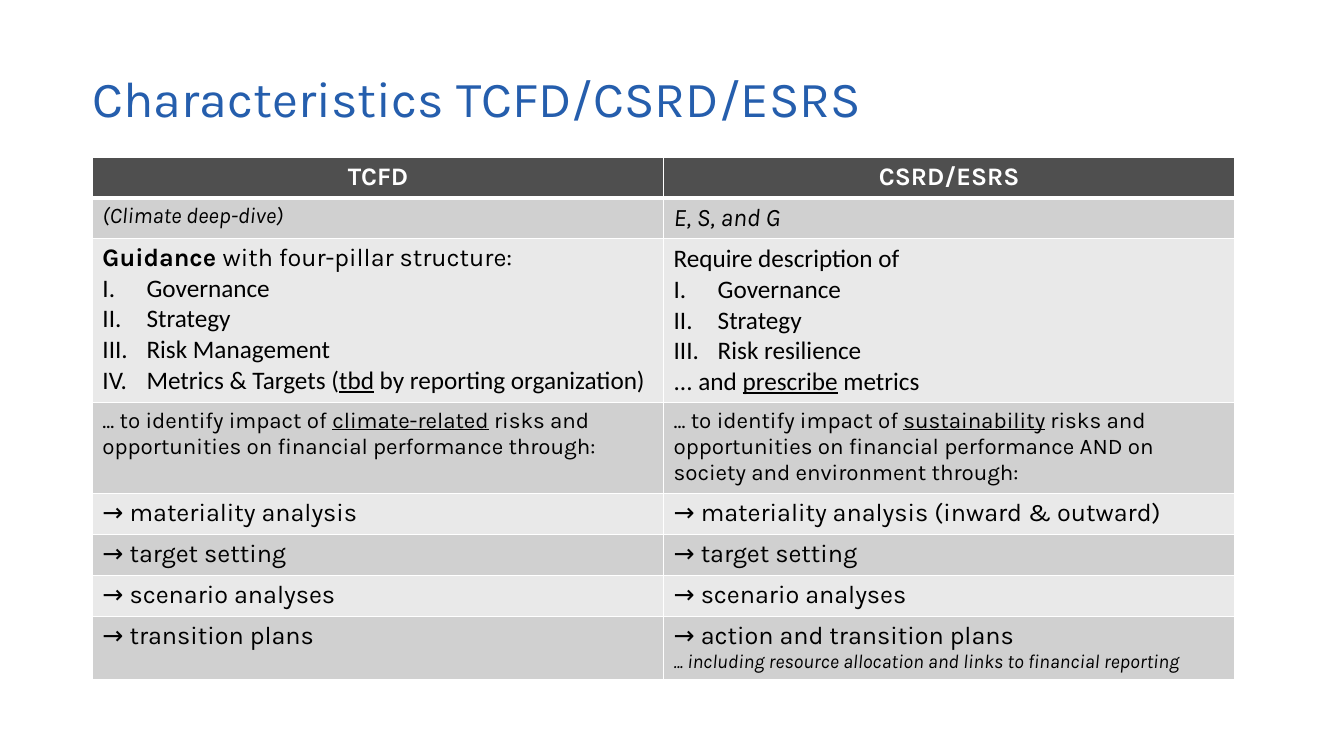
from pptx import Presentation
from pptx import util as u
from pptx.dml import color
from pptx.enum import text
from pptx.oxml import parse_xml
from pptx.oxml.ns import nsdecls

Pt = u.Pt
KARLA, CALIBRI = "Karla", "Calibri"
BLUE, BLACK, WHITE = "255EAD", "000000", "FFFFFF"
HEADER_GREY, DARK_BAND, LIGHT_BAND = "4F4F4F", "D0D0D0", "E9E9E9"
ROW_HEIGHTS = [29.2, 26, 117.4, 48, 29.2, 29.2, 29.2, 29.2]


def rgb(value):
    return color.RGBColor.from_string(value)


def line(*runs, size=18, font=KARLA, numbered=False):
    return runs, size, font, numbered


def pillars(*names):
    return [line((name, ""), font=CALIBRI, numbered=True) for name in names]


def steps(tcfd, csrd):
    return [[line(("→ " + step, ""))] for step in (tcfd, csrd)]


COMPARISON = [
    [[line(("TCFD", "b"))], [line(("CSRD/ESRS", "b"))]],
    [[line(("(Climate deep-dive)", "i"), size=16)],
     [line(("E, S, and G", "i"))]],
    [[line(("Guidance ", "b"), ("with four-pillar structure:", "")),
      *pillars("Governance", "Strategy", "Risk Management"),
      line(("Metrics & Targets (", ""), ("tbd", "u"),
           (" by reporting organization)", ""), font=CALIBRI, numbered=True)],
     [line(("Require description of", ""), font=CALIBRI),
      *pillars("Governance", "Strategy", "Risk resilience"),
      line(("... and ", ""), ("prescribe", "u"), (" metrics", ""), font=CALIBRI)]],
    [[line(("... to identify impact of ", ""), ("climate-related", "u"),
           (" risks and opportunities on financial performance through:", ""), size=16)],
     [line(("... to identify impact of ", ""), ("sustainability", "u"),
           (" risks and opportunities on financial performance AND on"
            " society and environment through:", ""), size=16)]],
    steps("materiality analysis", "materiality analysis (inward & outward)"),
    steps("target setting", "target setting"),
    steps("scenario analyses", "scenario analyses"),
    steps("transition plans", "action and transition plans"),
]
COMPARISON[-1][1].append(
    line(("... including resource allocation and links to financial reporting", "i"), size=14))


def add_run(paragraph, words, style, size, font, ink):
    run = paragraph.add_run()
    run.text = words
    run.font.name = font
    run.font.size = Pt(size)
    run.font.color.rgb = rgb(ink)
    run.font.bold = "b" in style
    run.font.italic = "i" in style
    run.font.underline = "u" in style


def number_roman(paragraph):
    properties = paragraph._p.get_or_add_pPr()
    indent = Pt(31.5)
    properties.set("marL", str(indent))
    properties.set("indent", str(-indent))
    properties.append(parse_xml(
        f'<a:buFont {nsdecls("a")} typeface="+mj-lt"/>'))
    properties.append(parse_xml(
        f'<a:buAutoNum {nsdecls("a")} type="romanUcPeriod"/>'))


def set_borders(cell, **widths):
    for position, (side, width) in enumerate(widths.items()):
        cell._tc.get_or_add_tcPr().insert(position, parse_xml(
            f'<a:ln{side} {nsdecls("a")} w="{Pt(width)}"><a:solidFill>'
            f'<a:srgbClr val="{WHITE}"/></a:solidFill></a:ln{side}>'))


def fill_cell(cell, lines, row):
    header = row == 0
    cell.fill.solid()
    band = HEADER_GREY if header else (DARK_BAND if row % 2 else LIGHT_BAND)
    cell.fill.fore_color.rgb = rgb(band)
    set_borders(cell, L=1, R=1, T=3 if row == 1 else 1, B=3 if header else 1)
    for index, (runs, size, font, numbered) in enumerate(lines):
        frame = cell.text_frame
        paragraph = frame.add_paragraph() if index else frame.paragraphs[0]
        if header:
            paragraph.alignment = text.PP_ALIGN.CENTER
        if numbered:
            number_roman(paragraph)
        for words, style in runs:
            add_run(paragraph, words, style, size, font, WHITE if header else BLACK)


def add_title(slide, left, top, width, height):
    heading = slide.shapes.add_textbox(Pt(left), Pt(top), Pt(width), Pt(height))
    frame = heading.text_frame
    frame.word_wrap = True
    frame.vertical_anchor = text.MSO_ANCHOR.BOTTOM
    frame.margin_left = 0
    frame.paragraphs[0].line_spacing = 0.9
    add_run(frame.paragraphs[0], "Characteristics TCFD/CSRD/ESRS", "", 36, KARLA, BLUE)


def add_comparison(slide, left, top, width, height):
    frame = slide.shapes.add_table(len(COMPARISON), 2, Pt(left), Pt(top),
                                   Pt(width), Pt(height))
    table = frame.table
    table.first_row = table.horz_banding = False
    for row, (cells, row_height) in enumerate(zip(COMPARISON, ROW_HEIGHTS)):
        table.rows[row].height = Pt(row_height)
        for column, lines in enumerate(cells):
            fill_cell(table.cell(row, column), lines, row)
    frame.height = Pt(height)


def main():
    deck = Presentation()
    deck.slide_width, deck.slide_height = Pt(960), Pt(540)
    slide = deck.slides.add_slide(deck.slide_layouts[6])
    add_title(slide, 66, 45.4, 745, 49.7)
    add_comparison(slide, 66, 112.3, 816, 373.7)
    deck.save("out.pptx")


if __name__ == "__main__":
    main()
